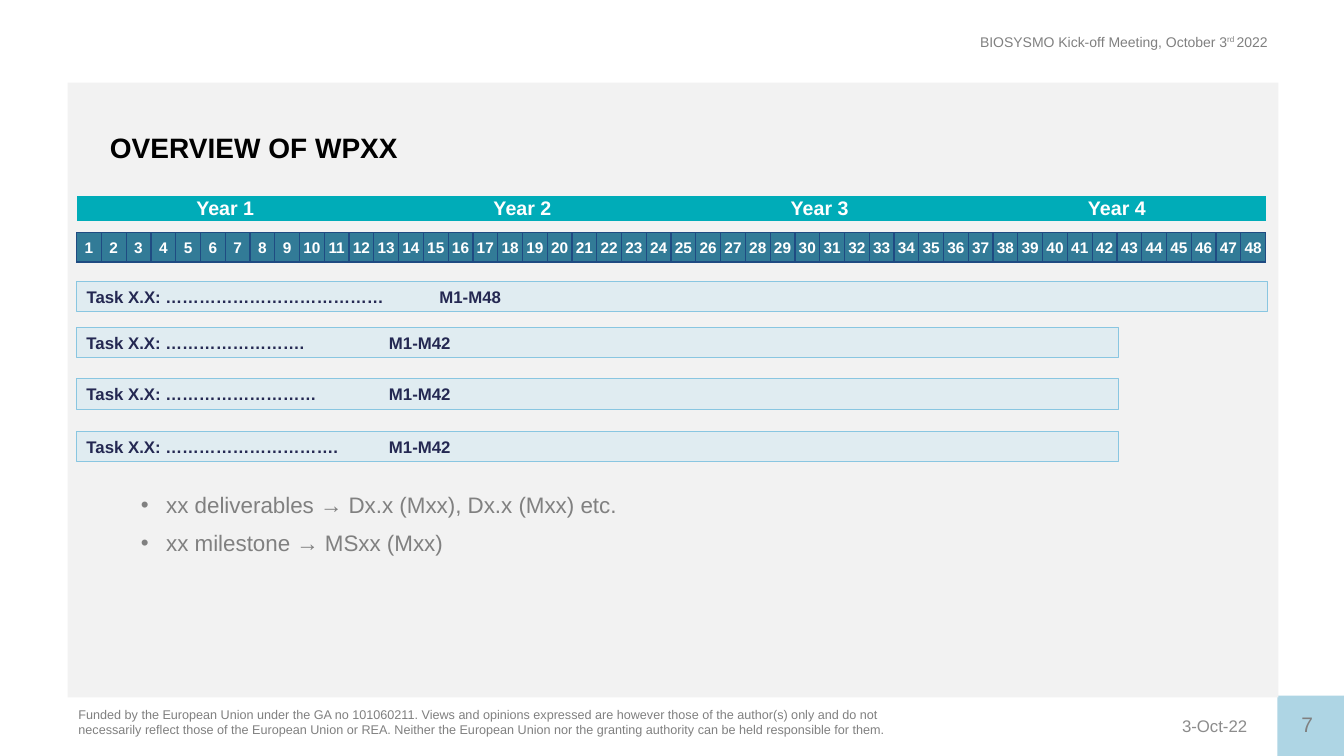
from lxml import etree
from pptx import Presentation
from pptx.dml.color import RGBColor
from pptx.enum import shapes, text
from pptx.oxml.ns import qn
from pptx.util import Inches, Pt

COLORS = {
    "panel": "F2F2F2", "corner": "AED5E4", "grey": "808080", "date": "8C8C8C",
    "title": "000000", "white": "FFFFFF", "year": "00ACB8", "month": "327B97",
    "grid": "1F4B82", "bar": "E0ECF1", "bar_line": "89C6E1", "navy": "242852",
}
TITLE = "OVERVIEW OF WPXX"
MEETING = [("BIOSYSMO Kick-off Meeting, October 3", 0), ("rd ", 30000), ("2022", 0)]
DATE = "3-Oct-22"
PAGE = "7"
FUNDING = (
    "Funded by the European Union under the GA no 101060211. Views and opinions "
    "expressed are however those of the author(s) only and do not necessarily reflect "
    "those of the European Union or REA. Neither the European Union nor the granting "
    "authority can be held responsible for them."
)
YEARS = ["Year 1", "Year 2", "Year 3", "Year 4"]
TASKS = [
    ("Task X.X: …………………………………", 48, 2.79),
    ("Task X.X: …………………….", 42, 3.25),
    ("Task X.X: ………………………", 42, 3.76),
    ("Task X.X: ………………………….", 42, 4.28),
]
BULLETS = ["xx deliverables → Dx.x (Mxx), Dx.x (Mxx) etc.", "xx milestone → MSxx (Mxx)"]

LEFT, WIDTH, MONTHS = 0.76, 11.81, 48
MONTH_WIDTH = WIDTH / MONTHS
ROW_HEIGHTS = [0.25, 0.12, 0.29]
NO_GRID_STYLE = "{2D5ABB26-0587-4C30-8999-92F81FD0307C}"
ALIGN, ANCHOR = text.PP_ALIGN, text.MSO_ANCHOR


def rgb(name):
    return RGBColor.from_string(COLORS[name])


def style(p, size, color, bold=False, align=ALIGN.LEFT):
    p.alignment = align
    for r in p.runs:
        r.font.name = "Arial"
        r.font.size = Pt(size)
        r.font.bold = bold
        r.font.color.rgb = rgb(color)


def add_box(s, box, fill, line=None):
    sp = s.shapes.add_shape(shapes.MSO_SHAPE.RECTANGLE, *map(Inches, box))
    sp.shadow.inherit = False
    sp.fill.solid()
    sp.fill.fore_color.rgb = rgb(fill)
    if line:
        sp.line.color.rgb = rgb(line)
        sp.line.width = Pt(0.75)
    else:
        sp.line.fill.background()
    return sp


def add_text(s, box, content, size, color, align=ALIGN.LEFT, anchor=ANCHOR.TOP, wrap=True):
    tf = s.shapes.add_textbox(*map(Inches, box)).text_frame
    tf.word_wrap = wrap
    tf.vertical_anchor = anchor
    tf.text = content
    for p in tf.paragraphs:
        style(p, size, color, align=align)
    return tf


def set_border(cell, sides):
    tc_pr = cell._tc.get_or_add_tcPr()
    for i, side in enumerate(sides):
        ln = etree.Element(qn(f"a:ln{side}"), w=str(Pt(1)))
        solid = etree.SubElement(ln, qn("a:solidFill"))
        etree.SubElement(solid, qn("a:srgbClr"), val=COLORS["grid"])
        tc_pr.insert(i, ln)


def fill_cell(cell, label, size, fill):
    cell.text = label
    style(cell.text_frame.paragraphs[0], size, "white", True, ALIGN.CENTER)
    cell.fill.solid()
    cell.fill.fore_color.rgb = rgb(fill)


def add_calendar(s):
    frame = s.shapes.add_table(3, MONTHS, Inches(LEFT), Inches(1.94),
                               Inches(WIDTH), Inches(sum(ROW_HEIGHTS)))
    table = frame.table
    table.first_row = table.horz_banding = False
    table._tbl.tblPr.find(qn("a:tableStyleId")).text = NO_GRID_STYLE
    for row, height in zip(table.rows, ROW_HEIGHTS):
        row.height = Inches(height)
    for column in table.columns:
        column.width = Inches(MONTH_WIDTH)
    for cell in table.iter_cells():
        cell.margin_left = cell.margin_right = cell.margin_top = Inches(0.01)
        cell.margin_bottom = 0
        cell.vertical_anchor = ANCHOR.MIDDLE
    span = MONTHS // len(YEARS)
    for i, year in enumerate(YEARS):
        first = table.cell(0, i * span)
        first.merge(table.cell(0, (i + 1) * span - 1))
        fill_cell(first, year, 14, "year")
    for col in range(MONTHS):
        gap = table.cell(1, col)
        gap.fill.background()
        etree.SubElement(gap.text_frame.paragraphs[0]._p, qn("a:endParaRPr"), sz="500")
        set_border(gap, "B")
        month = table.cell(2, col)
        fill_cell(month, str(col + 1), 11, "month")
        set_border(month, "LRTB")


def add_tasks(s):
    for name, end, top in TASKS:
        sp = add_box(s, (LEFT, top, end * MONTH_WIDTH, 0.3), "bar", "bar_line")
        tf = sp.text_frame
        tf.vertical_anchor = ANCHOR.MIDDLE
        tf.text = f"{name}\t\tM1-M{end}"
        style(tf.paragraphs[0], 12, "navy", True)


def add_bullets(s):
    tf = add_text(s, (1.3, 4.85, 11, 1.11), "\n".join(BULLETS), 16, "grey")
    for i, p in enumerate(tf.paragraphs):
        p_pr = p._p.get_or_add_pPr()
        p_pr.set("marL", str(Inches(0.25)))
        p_pr.set("indent", str(-Inches(0.25)))
        etree.SubElement(p_pr, qn("a:buFont"), typeface="Arial")
        etree.SubElement(p_pr, qn("a:buChar"), char="•")
        p.line_spacing = 0.9
        p.space_before = Pt(10 if i else 0)


def add_frame(s):
    tf = add_text(s, (8.24, 0.28, 4.43, 0.27), "", 10, "grey")
    p = tf.paragraphs[0]
    for content, baseline in MEETING:
        r = p.add_run()
        r.text = content
        r.font._element.set("baseline", str(baseline))
    style(p, 10, "grey", align=ALIGN.RIGHT)
    add_text(s, (7.97, 7, 4.5, 0.4), DATE, 12, "date", ALIGN.RIGHT, ANCHOR.MIDDLE)
    add_box(s, (12.67, 6.9, 0.67, 0.61), "corner")
    add_text(s, (0.68, 6.96, 8.45, 0.4), FUNDING, 9, "grey")
    add_box(s, (0.67, 0.82, 12.01, 6.1), "panel")
    add_text(s, (12.81, 7.01, 0.46, 0.35), PAGE, 15, "grey", wrap=False)


def add_title(s):
    title = s.shapes.title
    title.left, title.top, title.width, title.height = map(Inches, (0.99, 1.24, 5.17, 0.44))
    tf = title.text_frame
    tf.text = TITLE
    tf.word_wrap = True
    tf.auto_size = text.MSO_AUTO_SIZE.NONE
    tf.vertical_anchor = ANCHOR.TOP
    style(tf.paragraphs[0], 20, "title", True)
    s.shapes._spTree.append(title._element)


def main():
    prs = Presentation()
    prs.slide_width, prs.slide_height = Inches(13.33), Inches(7.5)
    s = prs.slides.add_slide(prs.slide_layouts[5])
    add_frame(s)
    add_title(s)
    add_tasks(s)
    add_calendar(s)
    add_bullets(s)
    prs.save("out.pptx")


if __name__ == "__main__":
    main()
